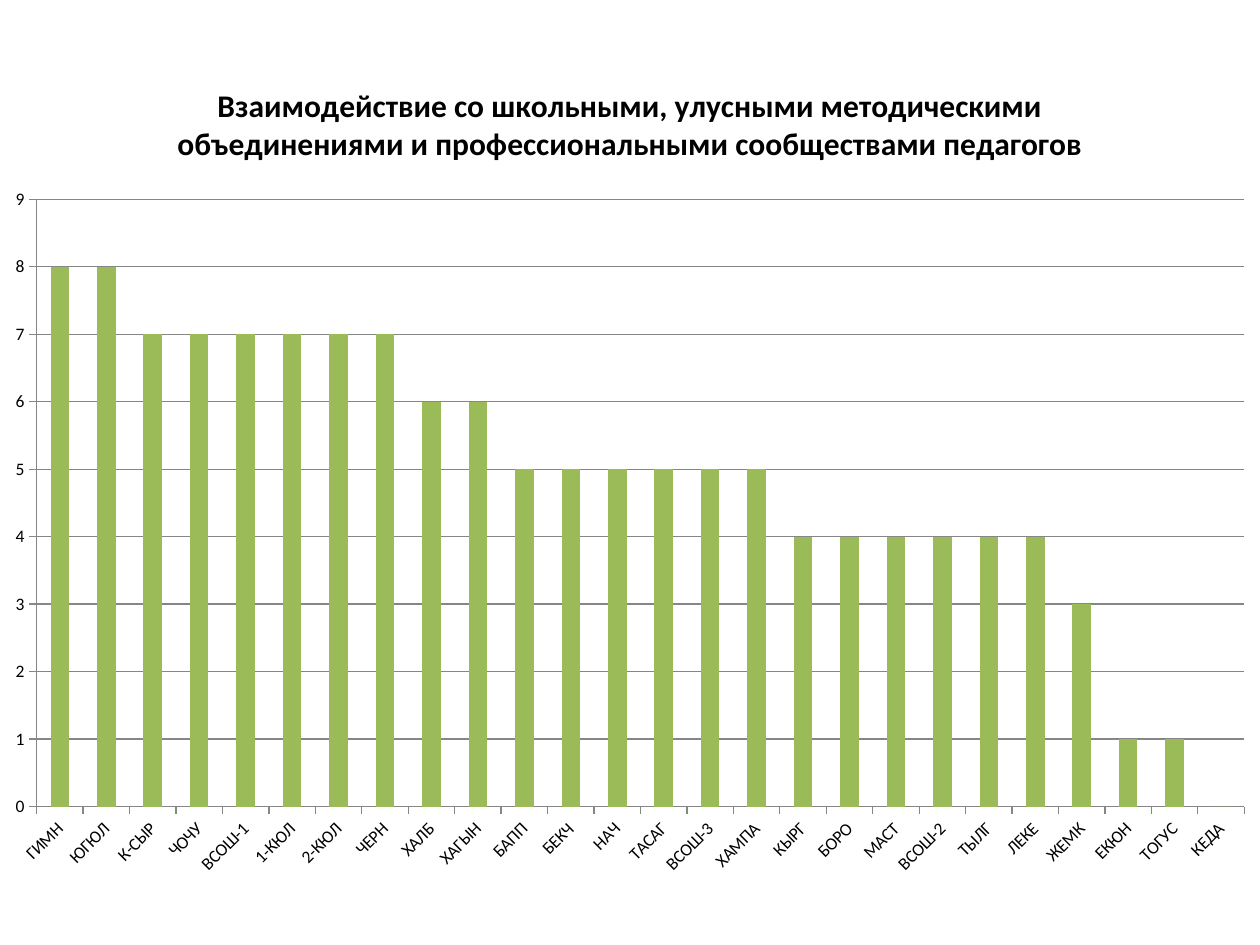
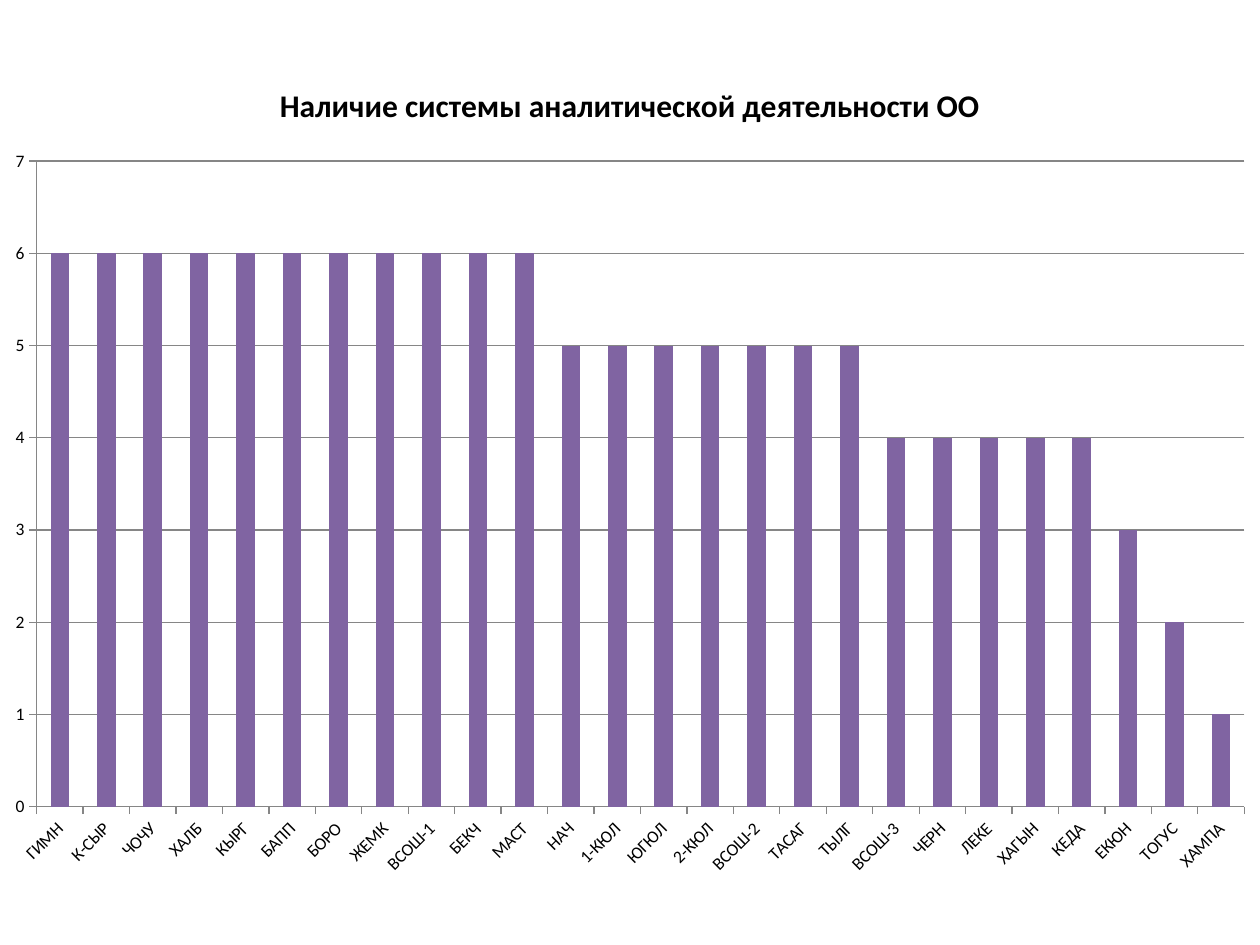
from pptx import Presentation
from pptx.chart.data import CategoryChartData
from pptx.dml.color import RGBColor
from pptx.enum.chart import XL_CHART_TYPE as ChartType, XL_TICK_MARK as TickMark
from pptx.oxml.ns import qn
from pptx.util import Pt

COLORS = {"text": "000000", "line": "868686", "green": "9BBB59", "purple": "8064A2"}
FONT = "Calibri"
PX = 914400 / 126
SLIDE_SIZE = (1260, 945)
CHART_BOX = (-10, 54, 1280, 837)
LABEL_ANGLE = -45

CHARTS = [
    {
        "title": "Взаимодействие со школьными, улусными методическими "
                 "объединениями и профессиональными сообществами педагогов",
        "color": "green",
        "top": 9,
        "schools_by_score": {
            8: "ГИМН ЮГЮЛ",
            7: "К-СЫР ЧОЧУ ВСОШ-1 1-КЮЛ 2-КЮЛ ЧЕРН",
            6: "ХАЛБ ХАГЫН",
            5: "БАПП БЕКЧ НАЧ ТАСАГ ВСОШ-3 ХАМПА",
            4: "КЫРГ БОРО МАСТ ВСОШ-2 ТЫЛГ ЛЕКЕ",
            3: "ЖЕМК",
            1: "ЕКЮН ТОГУС",
            0: "КЕДА",
        },
    },
    {
        "title": "Наличие системы аналитической деятельности ОО",
        "color": "purple",
        "top": 7,
        "schools_by_score": {
            6: "ГИМН К-СЫР ЧОЧУ ХАЛБ КЫРГ БАПП БОРО ЖЕМК ВСОШ-1 БЕКЧ МАСТ",
            5: "НАЧ 1-КЮЛ ЮГЮЛ 2-КЮЛ ВСОШ-2 ТАСАГ ТЫЛГ",
            4: "ВСОШ-3 ЧЕРН ЛЕКЕ ХАГЫН КЕДА",
            3: "ЕКЮН",
            2: "ТОГУС",
            1: "ХАМПА",
        },
    },
]


def emu(lengths):
    return [round(length * PX) for length in lengths]


def color(name):
    return RGBColor.from_string(COLORS[name])


def style_font(font, size, bold=False):
    font.name = FONT
    font.size = Pt(size)
    font.bold = bold
    font.color.rgb = color("text")


def style_line(line):
    line.color.rgb = color("line")
    line.width = Pt(0.75)


def style_axes(chart, top):
    schools, scores = chart.category_axis, chart.value_axis
    for axis in (schools, scores):
        axis.major_tick_mark = TickMark.OUTSIDE
        axis.minor_tick_mark = TickMark.NONE
        style_line(axis.format.line)
        style_font(axis.tick_labels.font, 10)
    schools.has_major_gridlines = False
    label_body = schools._element.find(qn("c:txPr")).find(qn("a:bodyPr"))
    label_body.set("rot", str(LABEL_ANGLE * 60000))
    scores.minimum_scale, scores.maximum_scale, scores.major_unit = 0, top, 1
    scores.has_major_gridlines = True
    style_line(scores.major_gridlines.format.line)


def add_score_chart(page, content):
    pairs = [(school, score)
             for score, schools in content["schools_by_score"].items()
             for school in schools.split()]
    data = CategoryChartData(number_format="0")
    data.categories = [school for school, score in pairs]
    data.add_series("Series 1", [score for school, score in pairs])
    chart = page.shapes.add_chart(
        ChartType.COLUMN_CLUSTERED, *emu(CHART_BOX), data).chart
    style_font(chart.font, 10)
    chart.has_legend = False
    chart.has_title = True
    chart.chart_title.include_in_layout = False
    title = chart.chart_title.text_frame
    title.text = content["title"]
    style_font(title.paragraphs[0].font, 18, bold=True)
    style_font(title.paragraphs[0].runs[0].font, 18, bold=True)
    plot = chart.plots[0]
    plot.gap_width = 150
    plot.vary_by_categories = False
    fill = plot.series[0].format.fill
    fill.solid()
    fill.fore_color.rgb = color(content["color"])
    style_axes(chart, content["top"])


def main():
    deck = Presentation()
    deck.slide_width, deck.slide_height = emu(SLIDE_SIZE)
    for content in CHARTS:
        page = deck.slides.add_slide(deck.slide_layouts[6])
        add_score_chart(page, content)
    deck.save("out.pptx")


if __name__ == "__main__":
    main()
